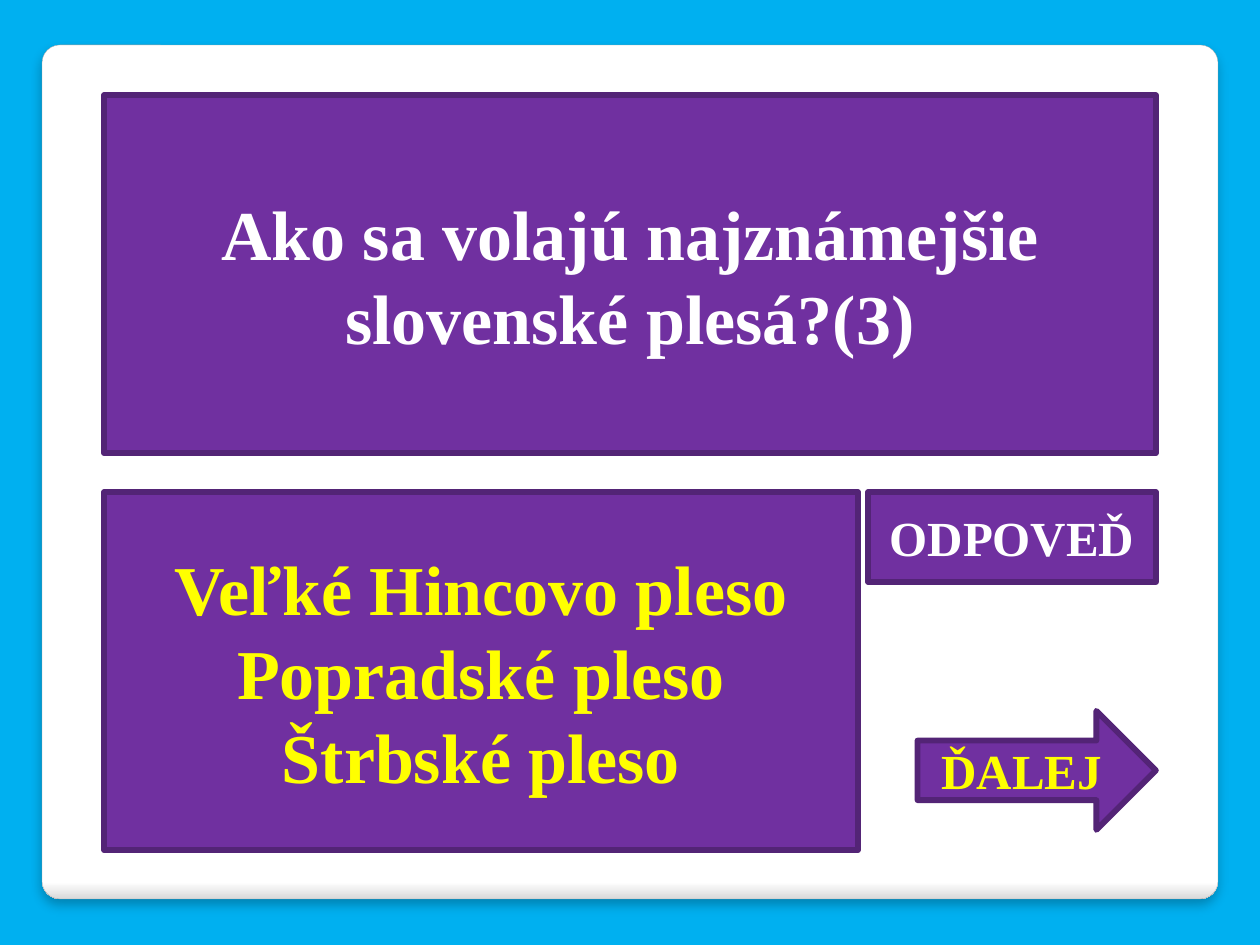
from lxml import etree
from pptx import Presentation
from pptx.dml.color import RGBColor
from pptx.enum.shapes import MSO_SHAPE
from pptx.enum.text import MSO_ANCHOR, PP_ALIGN
from pptx.oxml import parse_xml
from pptx.oxml.ns import nsdecls, qn
from pptx.util import Pt

RECTANGLE = MSO_SHAPE.RECTANGLE
ROUNDED = MSO_SHAPE.ROUNDED_RECTANGLE
ARROW = MSO_SHAPE.RIGHT_ARROW
MIDDLE = MSO_ANCHOR.MIDDLE
CENTER = PP_ALIGN.CENTER

COLORS = {
    "background": "00B0F0",
    "panel": "FFFFFF",
    "panel_edge": "DADADA",
    "panel_line": "A4A4A4",
    "box": "7030A0",
    "box_line": "532476",
    "white": "FFFFFF",
    "yellow": "FFFF00",
}


def color(name):
    return RGBColor.from_string(COLORS[name])


def write_text(shape, lines, size=40, font_color="white", font="Times New Roman"):
    """Fill the shape with bold, centred lines, one paragraph each."""
    frame = shape.text_frame
    frame.word_wrap = True
    frame.vertical_anchor = MIDDLE
    frame.text = "\n".join(lines)
    for paragraph in frame.paragraphs:
        paragraph.alignment = CENTER
        run_font = paragraph.runs[0].font
        run_font.name = font
        run_font.size = Pt(size)
        run_font.bold = True
        run_font.color.rgb = color(font_color)


presentation = Presentation()
presentation.slide_width = Pt(720)
presentation.slide_height = Pt(540)
slide = presentation.slides.add_slide(presentation.slide_layouts[6])
slide.background.fill.solid()
slide.background.fill.fore_color.rgb = color("background")

# White panel with a grey lower edge and a soft shadow
panel = slide.shapes.add_shape(ROUNDED, Pt(24), Pt(25.7), Pt(672), Pt(488))
panel.adjustments[0] = 0.021
panel.fill.gradient()
panel.fill.gradient_angle = 270
for stop, position, name in zip(
    panel.fill.gradient_stops, (0.98, 1), ("panel", "panel_edge")
):
    stop.position = position
    stop.color.rgb = color(name)
panel.line.color.rgb = color("panel_line")
panel.line.width = Pt(0.16)
panel.element.spPr.append(parse_xml(
    f'<a:effectLst {nsdecls("a")}>'
    f'<a:outerShdw blurRad="{Pt(6)}" dist="{Pt(4)}" dir="5400000" rotWithShape="0">'
    '<a:srgbClr val="000000"><a:alpha val="25000"/></a:srgbClr>'
    '</a:outerShdw></a:effectLst>'
))

# Question, answer and the two buttons share left and right edges
LEFT, RIGHT = 59.5, 660.5
QUESTION_TOP, ANSWER_TOP, BOX_HEIGHT = 54.5, 281.3, 204.5
boxes = [
    (RECTANGLE, LEFT, QUESTION_TOP, RIGHT - LEFT, BOX_HEIGHT,
     ["Ako sa volajú najznámejšie slovenské plesá?(3)"], 40, "white"),
    (RECTANGLE, LEFT, ANSWER_TOP, 430.8, BOX_HEIGHT,
     ["Veľké Hincovo pleso", "Popradské pleso", "Štrbské pleso"], 40, "yellow"),
    (RECTANGLE, RIGHT - 164.4, ANSWER_TOP, 164.4, 51.2, ["ODPOVEĎ"], 28, "white"),
    (ARROW, RIGHT - 136.2, 406.2, 136.2, 68, ["ĎALEJ"], 28, "yellow"),
]
for kind, left, top, width, height, lines, size, font_color in boxes:
    box = slide.shapes.add_shape(kind, Pt(left), Pt(top), Pt(width), Pt(height))
    box.shadow.inherit = False
    box.fill.solid()
    box.fill.fore_color.rgb = color("box")
    box.line.color.rgb = color("box_line")
    box.line.width = Pt(3.35)
    etree.SubElement(box.element.spPr.find(qn("a:ln")), qn("a:round"))
    write_text(box, lines, size=size, font_color=font_color)

presentation.save("out.pptx")
